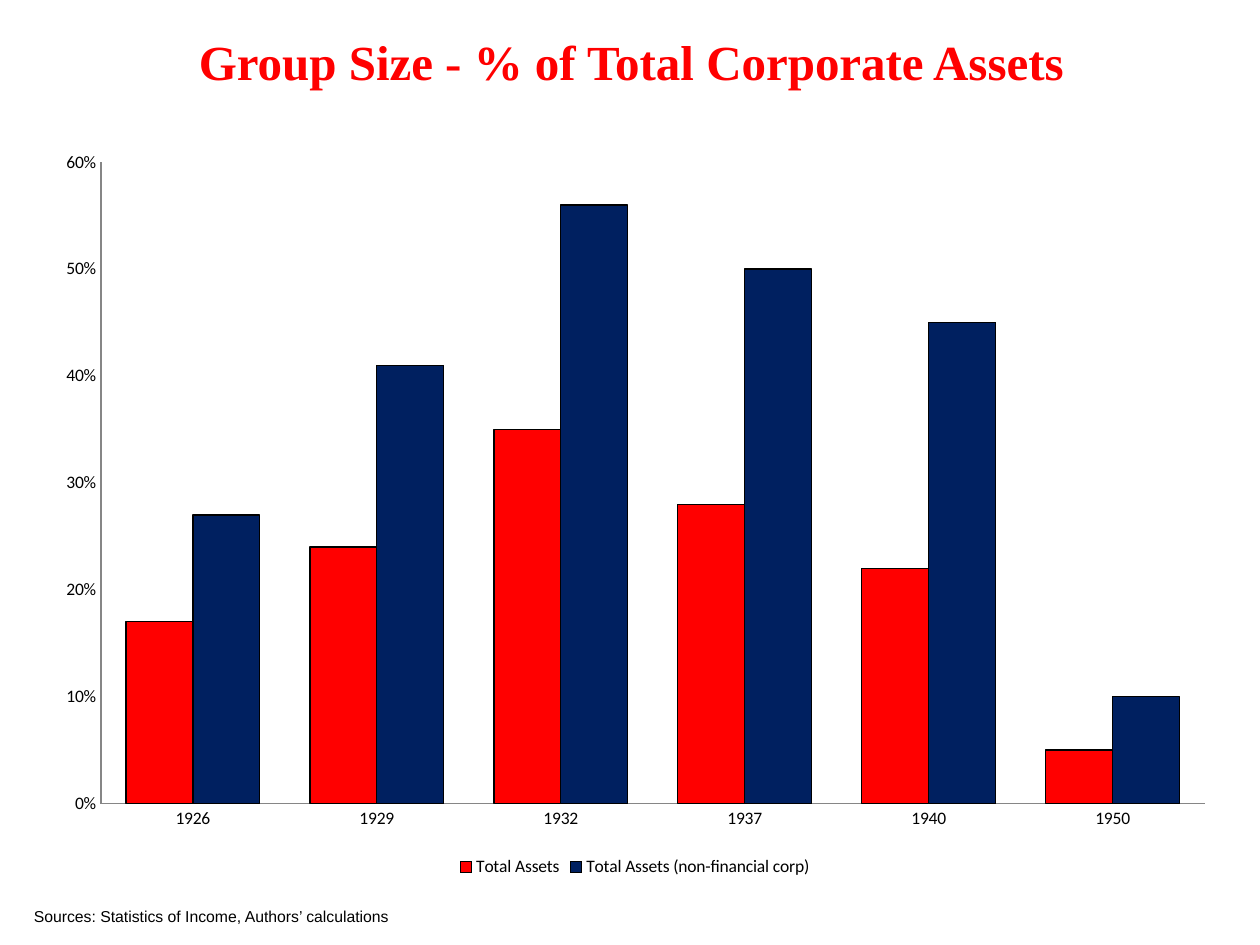
from lxml import etree
from pptx import Presentation
from pptx import util as u
from pptx.chart.data import CategoryChartData
from pptx.dml.color import RGBColor
from pptx.enum import chart as ch, text
from pptx.oxml import ns

COLORS = {"red": "FF0000", "navy": "002060", "black": "000000", "axis": "868686"}

deck = Presentation()
deck.slide_width, deck.slide_height = u.Inches(10), u.Inches(7.5)
page = deck.slides.add_slide(deck.slide_layouts[5])


def write(shape, words, font, size, color, bold=False,
          align=text.PP_ALIGN.LEFT, anchor=text.MSO_ANCHOR.TOP, wrap=True):
    frame = shape.text_frame
    frame.word_wrap, frame.vertical_anchor = wrap, anchor
    frame.auto_size = text.MSO_AUTO_SIZE.NONE
    para = frame.paragraphs[0]
    para.alignment = align
    span = para.add_run()
    span.text = words
    span.font.name, span.font.size, span.font.bold = font, u.Pt(size), bold
    span.font.color.rgb = RGBColor.from_string(COLORS[color])


# Title
title = page.shapes.title
title.left, title.top = u.Inches(0.02), u.Inches(0.13)
title.width, title.height = u.Inches(9.98), u.Inches(0.71)
write(title, "Group Size - % of Total Corporate Assets", "Times New Roman", 28, "red",
      bold=True, align=text.PP_ALIGN.CENTER, anchor=text.MSO_ANCHOR.MIDDLE)

# Sources
sources = page.shapes.add_textbox(u.Inches(0.17), u.Inches(7.15), u.Inches(3.67), u.Inches(0.25))
write(sources, "Sources: Statistics of Income, Authors’ calculations", "Arial", 9, "black",
      wrap=False)

# Chart
data = CategoryChartData(number_format="0%")
data.categories = ["1926", "1929", "1932", "1937", "1940", "1950"]
data.add_series("Total Assets", [0.17, 0.24, 0.35, 0.28, 0.22, 0.05])
data.add_series("Total Assets (non-financial corp)", [0.27, 0.41, 0.56, 0.5, 0.45, 0.1])
chart = page.shapes.add_chart(ch.XL_CHART_TYPE.COLUMN_CLUSTERED, u.Inches(0.33), u.Inches(1.08),
                              u.Inches(9.42), u.Inches(5.92), data).chart
chart.has_title = False
chart.font.name, chart.font.size = "Calibri", u.Pt(10)
chart.font.color.rgb = RGBColor.from_string(COLORS["black"])

plot = chart.plots[0]
plot.gap_width, plot.overlap, plot.vary_by_categories = 75, 0, False
for series, color in zip(plot.series, ("red", "navy")):
    series.format.fill.solid()
    series.format.fill.fore_color.rgb = RGBColor.from_string(COLORS[color])
    series.format.line.color.rgb = RGBColor.from_string(COLORS["black"])
    series.format.line.width = u.Pt(0.75)

for axis in (chart.category_axis, chart.value_axis):
    axis.has_major_gridlines = False
    axis.major_tick_mark = axis.minor_tick_mark = ch.XL_TICK_MARK.NONE
    axis.format.line.color.rgb = RGBColor.from_string(COLORS["axis"])
    axis.format.line.width = u.Pt(0.75)
scale = chart.value_axis
scale.minimum_scale, scale.maximum_scale, scale.major_unit = 0, 0.6, 0.1
scale.tick_labels.number_format = "0%"
scale.tick_labels.number_format_is_linked = False

chart.has_legend = True
chart.legend.position = ch.XL_LEGEND_POSITION.BOTTOM
chart.legend.include_in_layout = False

# Inner plot area as shares of the chart
area = chart._chartSpace.chart.plotArea
for old in area.findall(ns.qn("c:layout")):
    area.remove(old)
layout = etree.Element(ns.qn("c:layout"))
manual = etree.SubElement(layout, ns.qn("c:manualLayout"))
for tag, value in (("layoutTarget", "inner"), ("xMode", "edge"), ("yMode", "edge"),
                   ("x", "0.05"), ("y", "0.035"), ("w", "0.93"), ("h", "0.86")):
    etree.SubElement(manual, ns.qn("c:" + tag)).set("val", value)
area.insert(0, layout)

deck.save("out.pptx")
